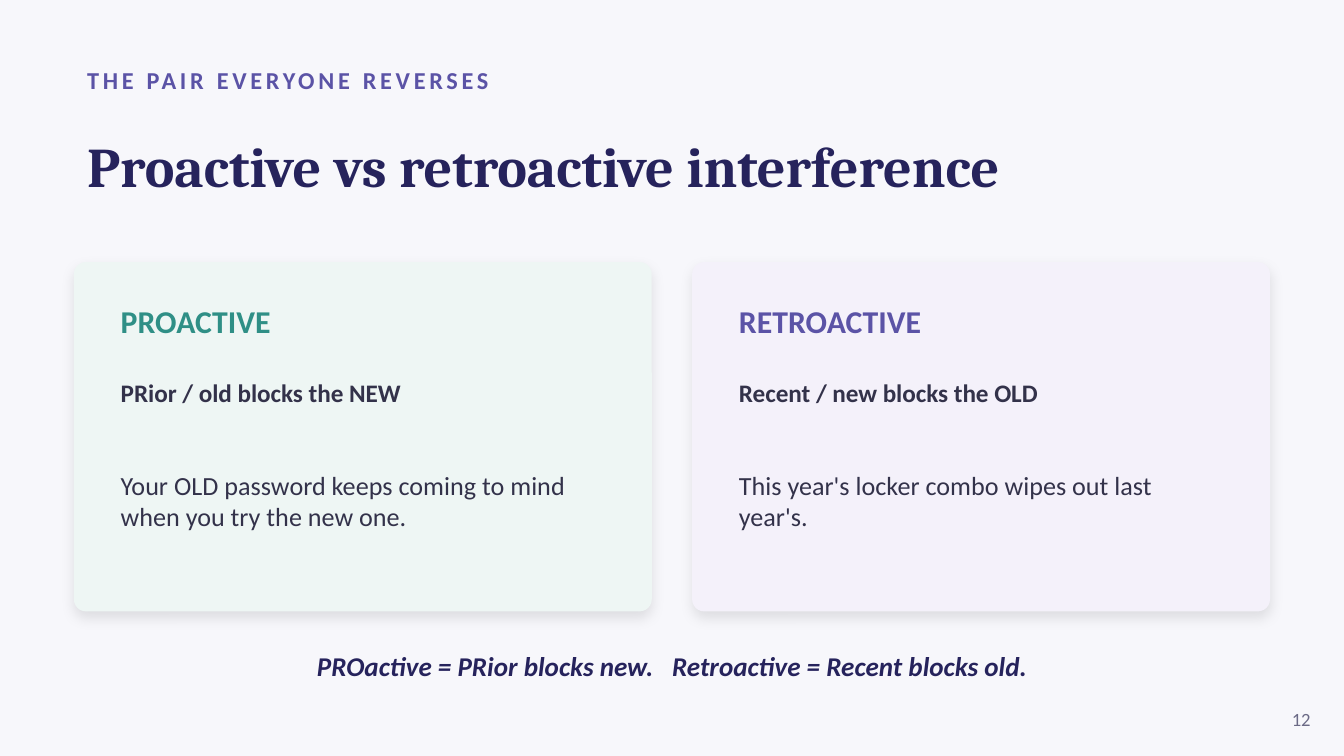
from pptx import Presentation
from pptx import util as u
from pptx.dml.color import RGBColor
from pptx.enum import shapes, text
from pptx.oxml import parse_xml
from pptx.oxml.ns import nsdecls

BACKGROUND = RGBColor(0xF7, 0xF7, 0xFB)
NAVY = RGBColor(0x26, 0x23, 0x5C)
VIOLET = RGBColor(0x5B, 0x53, 0xA6)
TEAL = RGBColor(0x2F, 0x8F, 0x86)
INK = RGBColor(0x33, 0x32, 0x4A)
GREY = RGBColor(0x6B, 0x6A, 0x86)
MINT = RGBColor(0xEE, 0xF6, 0xF4)
LILAC = RGBColor(0xF4, 0xF1, 0xFA)

MARGIN = 0.55
CARD_TOP, CARD_WIDTH, CARD_HEIGHT, CARD_GAP = 1.95, 4.3, 2.6, 0.3
CARD_PADDING = 0.25

CARDS = [
    ("PROACTIVE", TEAL, MINT, "PRior / old blocks the NEW",
     "Your OLD password keeps coming to mind when you try the new one."),
    ("RETROACTIVE", VIOLET, LILAC, "Recent / new blocks the OLD",
     "This year's locker combo wipes out last year's."),
]


def add_box(page, left, top, width, height, anchor=text.MSO_ANCHOR.MIDDLE):
    box = page.shapes.add_textbox(*map(u.Inches, (left, top, width, height)))
    box.text_frame.word_wrap = True
    box.text_frame.vertical_anchor = anchor
    return box.text_frame


def add_span(para, words, size, color, bold=False, italic=False,
             name="Calibri", spacing=0):
    """Add one run; spacing is the extra letter spacing in points."""
    span = para.add_run()
    span.text = words
    font = span.font
    font.name, font.size, font.bold, font.italic = name, u.Pt(size), bold, italic
    font.color.rgb = color
    if spacing:
        span.font._element.set("spc", str(round(spacing * 100)))


def add_shadow(shape):
    shape.shadow.inherit = False
    effects = shape._element.spPr.find("{*}effectLst")
    effects.append(parse_xml(
        f'<a:outerShdw {nsdecls("a")} blurRad="{u.Pt(7)}" dist="{u.Pt(3)}" '
        'dir="5400000" algn="bl" rotWithShape="0"><a:srgbClr val="000000">'
        '<a:alpha val="10000"/></a:srgbClr></a:outerShdw>'))


def add_card(page, left, heading, accent, fill, rule, example):
    card = page.shapes.add_shape(
        shapes.MSO_SHAPE.ROUNDED_RECTANGLE,
        *map(u.Inches, (left, CARD_TOP, CARD_WIDTH, CARD_HEIGHT)))
    card.adjustments[0] = 0.035
    card.fill.solid()
    card.fill.fore_color.rgb = fill
    card.line.fill.background()
    add_shadow(card)

    frame = add_box(page, left + CARD_PADDING, CARD_TOP + CARD_PADDING,
                    CARD_WIDTH - 2 * CARD_PADDING, 2.3, text.MSO_ANCHOR.TOP)
    lines = [(heading, 17, accent, True, 0),
             (rule, 13.5, INK, True, 20),
             (example, 14, INK, False, 33)]
    for index, (words, size, color, bold, gap) in enumerate(lines):
        para = frame.add_paragraph() if index else frame.paragraphs[0]
        if gap:
            para.space_before = u.Pt(gap)
        add_span(para, words, size, color, bold)


def main():
    deck = Presentation()
    # Widescreen, 16:9
    deck.slide_width = u.Inches(10)
    deck.slide_height = deck.slide_width * 9 // 16
    page = deck.slides.add_slide(deck.slide_layouts[6])
    page.background.fill.solid()
    page.background.fill.fore_color.rgb = BACKGROUND

    # Heading
    kicker = add_box(page, MARGIN, 0.42, 9, 0.35).paragraphs[0]
    add_span(kicker, "THE PAIR EVERYONE REVERSES", 13, VIOLET, True, spacing=2)
    title = add_box(page, MARGIN, 0.78, 8.9, 0.9).paragraphs[0]
    add_span(title, "Proactive vs retroactive interference", 30, NAVY, True,
             name="Cambria")

    # Comparison cards
    for index, content in enumerate(CARDS):
        add_card(page, MARGIN + index * (CARD_WIDTH + CARD_GAP), *content)

    # Memory aid, with a widened space between its two sentences
    aid = add_box(page, MARGIN, 4.75, 8.9, 0.4).paragraphs[0]
    aid.alignment = text.PP_ALIGN.CENTER
    for words, spacing in (("PROactive = PRior blocks new.", 0), (" ", 6.6),
                           ("Retroactive = Recent blocks old.", 0)):
        add_span(aid, words, 14.5, NAVY, True, True, spacing=spacing)

    # Page number
    number = add_box(page, 9.35, 5.2, 0.5, 0.3).paragraphs[0]
    number.alignment = text.PP_ALIGN.RIGHT
    add_span(number, "12", 10, GREY)

    deck.save("out.pptx")


if __name__ == "__main__":
    main()
